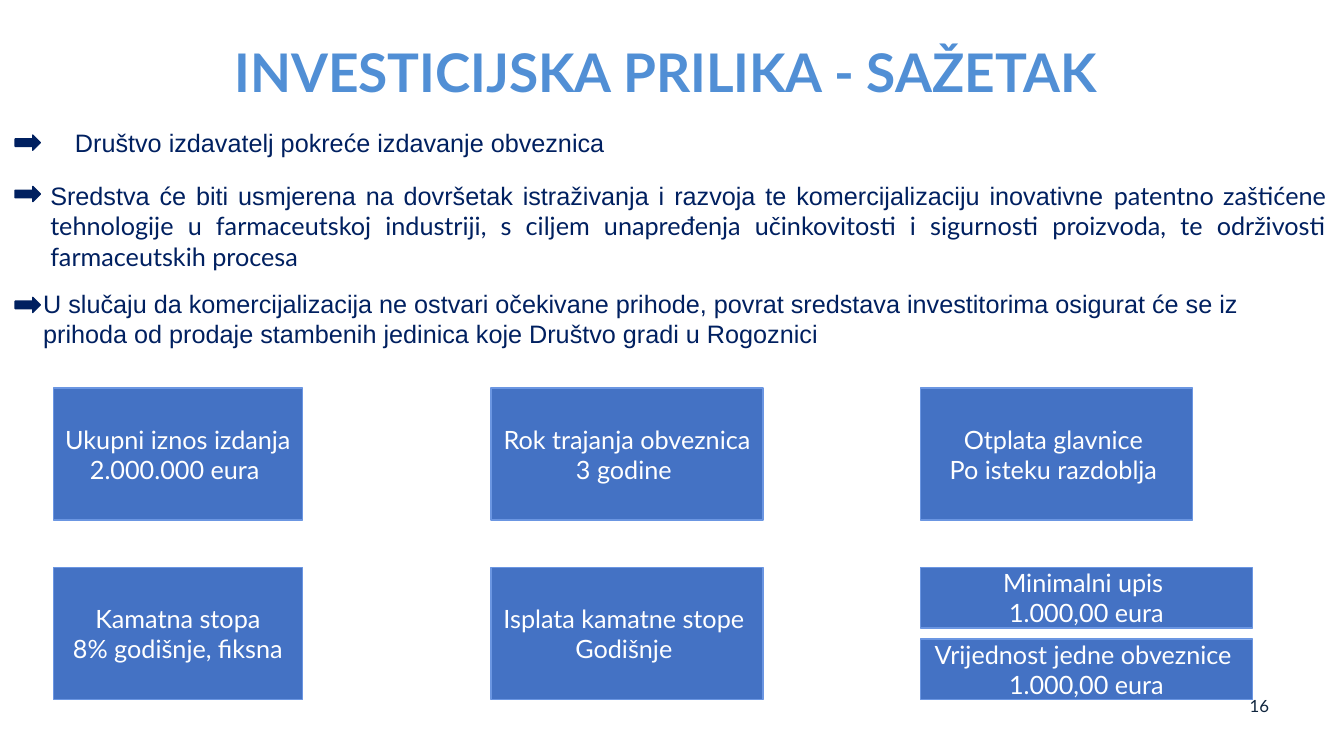
import pptx
import pptx.dml.color
import pptx.enum.shapes
import pptx.enum.text
import pptx.util

PX = 9144  # 100 px to the inch
NAVY = "002060"
SHAPE = pptx.enum.shapes.MSO_SHAPE
ALIGN = pptx.enum.text.PP_ALIGN
MIDDLE = pptx.enum.text.MSO_ANCHOR.MIDDLE
TOP = pptx.enum.text.MSO_ANCHOR.TOP


def color(value):
    return pptx.dml.color.RGBColor.from_string(value)


def scaled(box):
    return [pptx.util.Emu(length * PX) for length in box]


def add_span(para, text, font="Lato", size=18, ink=NAVY, bold=False):
    span = para.add_run()
    span.text = text
    span.font.name = font
    span.font.size = pptx.util.Pt(size)
    span.font.bold = bold
    span.font.color.rgb = color(ink)


def add_text_box(page, box, align, anchor=TOP, wrap=True):
    frame = page.shapes.add_textbox(*scaled(box)).text_frame
    frame.word_wrap = wrap
    frame.vertical_anchor = anchor
    para = frame.paragraphs[0]
    para.alignment = align
    return para


def add_filled_shape(page, kind, box, fill, line):
    shape = page.shapes.add_shape(kind, *scaled(box))
    shape.shadow.inherit = False
    shape.fill.solid()
    shape.fill.fore_color.rgb = color(fill)
    shape.line.color.rgb = color(line)
    shape.line.width = pptx.util.Pt(1)
    return shape


def add_title(page, box):
    para = add_text_box(page, box, ALIGN.CENTER, MIDDLE)
    para.line_spacing = 0.9
    add_span(para, "INVESTICIJSKA PRILIKA - SAŽETAK ", size=38, ink="518FD5", bold=True)


def add_point(page, box, spans, align, arrow_drop, wrap=True):
    """Statement with an arrow in the left margin."""
    para = add_text_box(page, box, align, wrap=wrap)
    for text, font in spans:
        add_span(para, text, font)
    arrow_box = (15, box[1] + arrow_drop, 25, 15)
    add_filled_shape(page, SHAPE.RIGHT_ARROW, arrow_box, NAVY, NAVY)


def add_card(page, box, lines):
    card = add_filled_shape(page, SHAPE.RECTANGLE, box, "4472C4", "6B96E2")
    frame = card.text_frame
    frame.word_wrap = True
    frame.vertical_anchor = MIDDLE
    for index, line in enumerate(lines):
        para = frame.add_paragraph() if index else frame.paragraphs[0]
        para.alignment = ALIGN.CENTER
        add_span(para, line, ink="FFFFFF")


def add_terms(page, box):
    """Grid of bond terms; the last cell is split into two wider cards."""
    left, top, width, height = box
    card_height = 131
    lower_top = top + height - card_height
    columns = [
        (0, 247, ("Ukupni iznos izdanja ", "2.000.000 eura "),
         ("Kamatna stopa", "8% godišnje, fiksna")),
        (434, 270, ("Rok trajanja obveznica ", "3 godine "),
         ("Isplata kamatne stope ", "Godišnje ")),
        (860, 270, ("Otplata glavnice ", "Po isteku razdoblja "), None),
    ]
    for offset, card_width, upper, lower in columns:
        add_card(page, (left + offset, top, card_width, card_height), upper)
        if lower:
            add_card(page, (left + offset, lower_top, card_width, card_height), lower)

    half_height, pitch = 60, 71
    halves = [("Minimalni upis ", "1.000,00 eura"),
              ("Vrijednost jedne obveznice ", "1.000,00 eura")]
    split_offset = columns[-1][0]
    for row, lines in enumerate(halves):
        add_card(page, (left + split_offset, lower_top + row * pitch,
                        width - split_offset, half_height), lines)


def add_page_number(page, box):
    para = add_text_box(page, box, ALIGN.CENTER, MIDDLE)
    add_span(para, "16", size=12, ink="0F253E")


def main():
    deck = pptx.Presentation()
    deck.slide_width, deck.slide_height = scaled((1333, 750))
    page = deck.slides.add_slide(deck.slide_layouts[6])

    add_page_number(page, (1224, 680, 50, 40))
    add_title(page, (92, 40, 1150, 69))

    # Statements
    add_point(page, (36, 121, 609, 40),
              [("Društvo izdavatelj pokreće izdavanje obveznica ", "Arial")],
              ALIGN.CENTER, 13, wrap=False)
    add_point(page, (40, 174, 1285, 101),
              [("Sredstva će biti usmjerena na dovršetak istraživanja i razvoja te "
                "komercijalizaciju inovativne ", "Arial"),
               ("patentno zaštićene tehnologije u farmaceutskoj industriji, s ciljem "
                "unapređenja učinkovitosti i sigurnosti proizvoda, te održivosti "
                "farmaceutskih procesa", "Lato")],
              ALIGN.JUSTIFY, 11)
    add_point(page, (33, 281, 1285, 71),
              [("U slučaju da komercijalizacija ne ostvari očekivane prihode, povrat "
                "sredstava investitorima osigurat će se iz prihoda od prodaje stambenih "
                "jedinica koje Društvo gradi u Rogoznici", "Arial")],
              ALIGN.LEFT, 14)

    add_terms(page, (53, 385, 1189, 309))
    deck.save("out.pptx")


if __name__ == "__main__":
    main()
